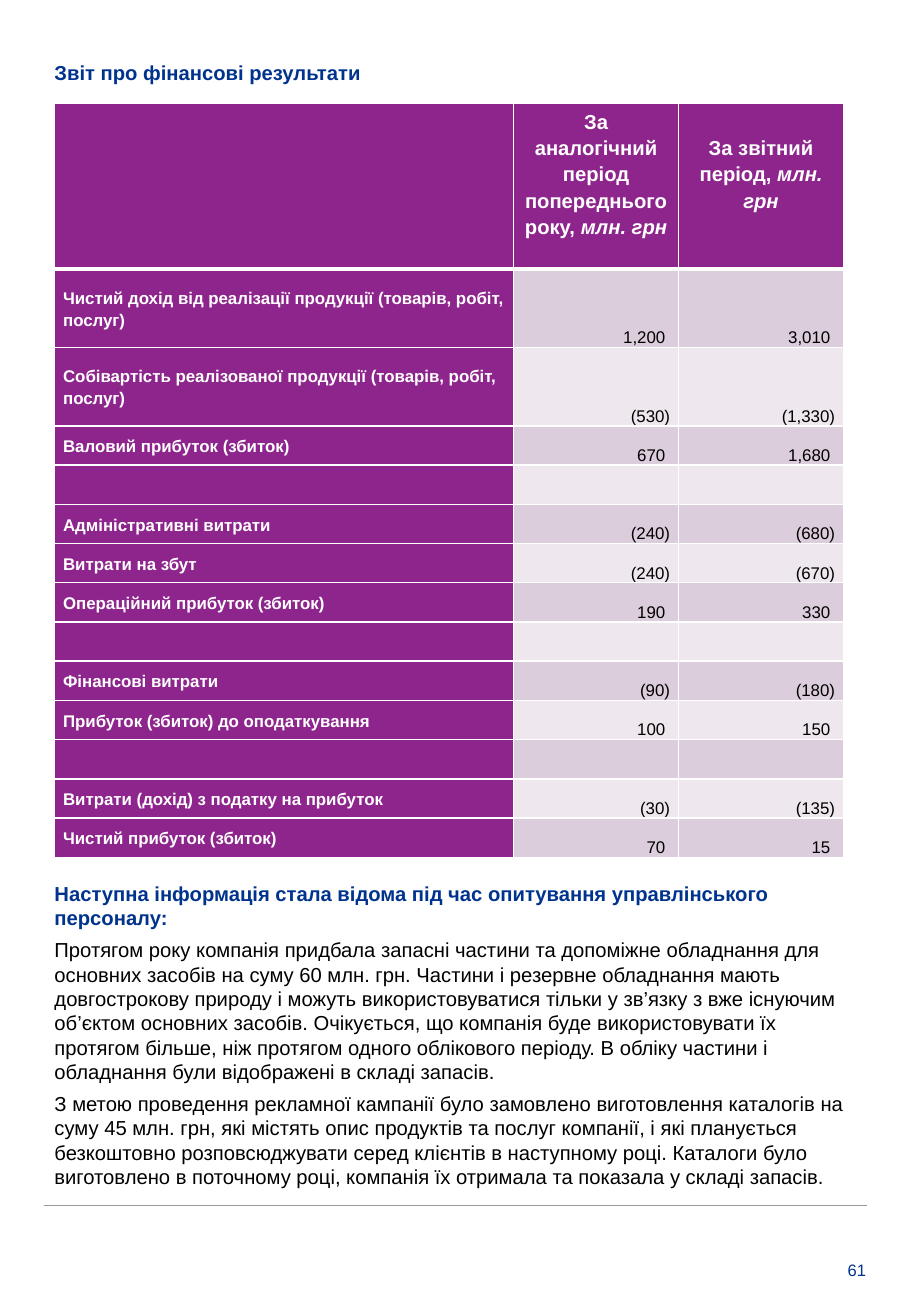
from dataclasses import dataclass

from lxml.etree import SubElement
from pptx import Presentation
from pptx.dml.color import RGBColor
from pptx.enum.shapes import MSO_CONNECTOR
from pptx.enum.text import MSO_ANCHOR, PP_ALIGN
from pptx.oxml import parse_xml
from pptx.oxml.ns import nsdecls, qn
from pptx.util import Cm, Pt

COLORS = {
    "navy": "00338D",
    "purple": "8E258D",
    "band_dark": "DBCDDB",
    "band_light": "EEE8EE",
    "rule": "97989A",
    "white": "FFFFFF",
    "black": "000000",
}
FONT = "Arial"
LEFT = 1.14
TEXT_WIDTH = 16.87
CELL_INSET = 0.18
COLUMN_WIDTHS = (9.6, 3.45, 3.45)
HEADER_HEIGHT = 3.33
UNIT = "млн. грн"
PERIODS = ("За аналогічний період попереднього року, ", "За звітний період, ")


@dataclass
class StatementLine:
    label: str = ""
    previous: str = ""
    current: str = ""
    height: float = 0.82


@dataclass
class Passage:
    text: str
    color: str = "black"
    bold: bool = False
    size: float = 12
    align: PP_ALIGN = PP_ALIGN.LEFT


STATEMENT = [
    StatementLine("Чистий дохід від реалізації продукції (товарів, робіт, послуг)", "1,200", "3,010", 1.64),
    StatementLine("Собівартість реалізованої продукції (товарів, робіт, послуг)", "(530)", "(1,330)", 1.64),
    StatementLine("Валовий прибуток (збиток)", "670", "1,680"),
    StatementLine(),
    StatementLine("Адміністративні витрати", "(240)", "(680)"),
    StatementLine("Витрати на збут", "(240)", "(670)"),
    StatementLine("Операційний прибуток (збиток)", "190", "330"),
    StatementLine(),
    StatementLine("Фінансові витрати", "(90)", "(180)"),
    StatementLine("Прибуток (збиток) до оподаткування", "100", "150"),
    StatementLine(),
    StatementLine("Витрати (дохід) з податку на прибуток", "(30)", "(135)"),
    StatementLine("Чистий прибуток (збиток)", "70", "15"),
]
TITLE = Passage("Звіт про фінансові результати", "navy", True)
PAGE_NUMBER = Passage("61", "navy", size=9.8, align=PP_ALIGN.RIGHT)
FINDINGS = [
    Passage("Наступна інформація стала відома під час опитування управлінського персоналу:", "navy", True),
    Passage(
        "Протягом року компанія придбала запасні частини та допоміжне обладнання для основних засобів "
        "на суму 60 млн. грн. Частини і резервне обладнання мають довгострокову природу і можуть "
        "використовуватися тільки у зв’язку з вже існуючим об’єктом основних засобів. Очікується, що "
        "компанія буде використовувати їх протягом більше, ніж протягом одного облікового періоду. "
        "В обліку частини і обладнання були відображені в складі запасів."
    ),
    Passage(
        "З метою проведення рекламної кампанії було замовлено виготовлення каталогів на суму 45 млн. грн, "
        "які містять опис продуктів та послуг компанії, і які планується безкоштовно розповсюджувати "
        "серед клієнтів в наступному році. Каталоги було виготовлено в поточному році, компанія їх "
        "отримала та показала у складі запасів."
    ),
]


def color(name: str) -> RGBColor:
    return RGBColor.from_string(COLORS[name])


def style_span(span, size: float, shade: str, bold: bool = False, italic: bool = False) -> None:
    span.font.name = FONT
    span.font.size = Pt(size)
    span.font.color.rgb = color(shade)
    span.font.bold = bold
    span.font.italic = italic


def add_passages(slide, left: float, top: float, width: float, height: float,
                 passages: list[Passage], inset: float = 0) -> None:
    box = slide.shapes.add_textbox(Cm(left), Cm(top), Cm(width), Cm(height))
    frame = box.text_frame
    frame.word_wrap = True
    frame.margin_left = frame.margin_top = Cm(inset)
    frame.margin_right = frame.margin_bottom = 0
    for index, passage in enumerate(passages):
        para = frame.add_paragraph() if index else frame.paragraphs[0]
        para.text = passage.text
        para.alignment = passage.align
        if index:
            para.space_before = Pt(4.7)
        style_span(para.runs[0], passage.size, passage.color, passage.bold)


def set_borders(cell, top: float = 1, bottom: float = 1) -> None:
    """Draw white borders; widths are in points."""
    properties = cell._tc.get_or_add_tcPr()
    widths = {"lnL": 1, "lnR": 1, "lnT": top, "lnB": bottom}
    for index, (tag, width) in enumerate(widths.items()):
        properties.insert(index, parse_xml(
            f'<a:{tag} {nsdecls("a")} w="{Pt(width)}"><a:solidFill>'
            f'<a:srgbClr val="{COLORS["white"]}"/></a:solidFill></a:{tag}>'
        ))


def fill_cell(cell, text: str, shade: str, anchor: MSO_ANCHOR, align: PP_ALIGN,
              size: float = 10, text_color: str = "white", bold: bool = True) -> None:
    cell.fill.solid()
    cell.fill.fore_color.rgb = color(shade)
    cell.margin_left = cell.margin_right = Cm(CELL_INSET)
    cell.margin_top = cell.margin_bottom = 0
    cell.vertical_anchor = anchor
    if text:
        para = cell.text_frame.paragraphs[0]
        para.text = text
        para.alignment = align
        para.line_spacing = 1.15
        style_span(para.runs[0], size, text_color, bold)


def add_statement(slide) -> None:
    height = HEADER_HEIGHT + sum(line.height for line in STATEMENT)
    table = slide.shapes.add_table(
        len(STATEMENT) + 1, len(COLUMN_WIDTHS),
        Cm(LEFT), Cm(2.16), Cm(sum(COLUMN_WIDTHS)), Cm(height),
    ).table
    for column, width in zip(table.columns, COLUMN_WIDTHS):
        column.width = Cm(width)

    table.rows[0].height = Cm(HEADER_HEIGHT)
    for index, period in enumerate(("", *PERIODS)):
        cell = table.cell(0, index)
        fill_cell(cell, period, "purple", MSO_ANCHOR.MIDDLE, PP_ALIGN.CENTER, size=12)
        if period:
            cell.margin_bottom = Cm(0.54)
            span = cell.text_frame.paragraphs[0].add_run()
            span.text = UNIT
            style_span(span, 12, "white", bold=True, italic=True)
        set_borders(cell, bottom=3)

    for row, line in enumerate(STATEMENT, start=1):
        table.rows[row].height = Cm(line.height)
        fill_cell(table.cell(row, 0), line.label, "purple", MSO_ANCHOR.MIDDLE, PP_ALIGN.LEFT)
        band = "band_dark" if row % 2 else "band_light"
        for index, amount in enumerate((line.previous, line.current), start=1):
            cell = table.cell(row, index)
            fill_cell(cell, amount, band, MSO_ANCHOR.BOTTOM, PP_ALIGN.RIGHT,
                      text_color="black", bold=False)
            if not amount.endswith(")"):
                cell.margin_right = Cm(CELL_INSET + 0.1)
        for index in range(len(COLUMN_WIDTHS)):
            set_borders(table.cell(row, index), top=3 if row == 1 else 1)


def add_footer_rule(slide) -> None:
    rule = slide.shapes.add_connector(MSO_CONNECTOR.STRAIGHT, Cm(0.91), Cm(25.2), Cm(18.14), Cm(25.2))
    rule.line.color.rgb = color("rule")
    rule.line.width = Pt(0.25)
    SubElement(rule._element.spPr, qn("a:effectLst"))


def main() -> None:
    deck = Presentation()
    deck.slide_width = Cm(19.05)
    deck.slide_height = Cm(27.51)
    page = deck.slides.add_slide(deck.slide_layouts[6])
    add_footer_rule(page)
    add_passages(page, 16.71, 26.11, 1.4, 0.66, [PAGE_NUMBER], inset=0.23)
    add_passages(page, LEFT, 1.27, TEXT_WIDTH, 0.86, [TITLE])
    add_statement(page)
    add_passages(page, LEFT, 18.42, TEXT_WIDTH, 5.92, FINDINGS)
    deck.save("out.pptx")


if __name__ == "__main__":
    main()
